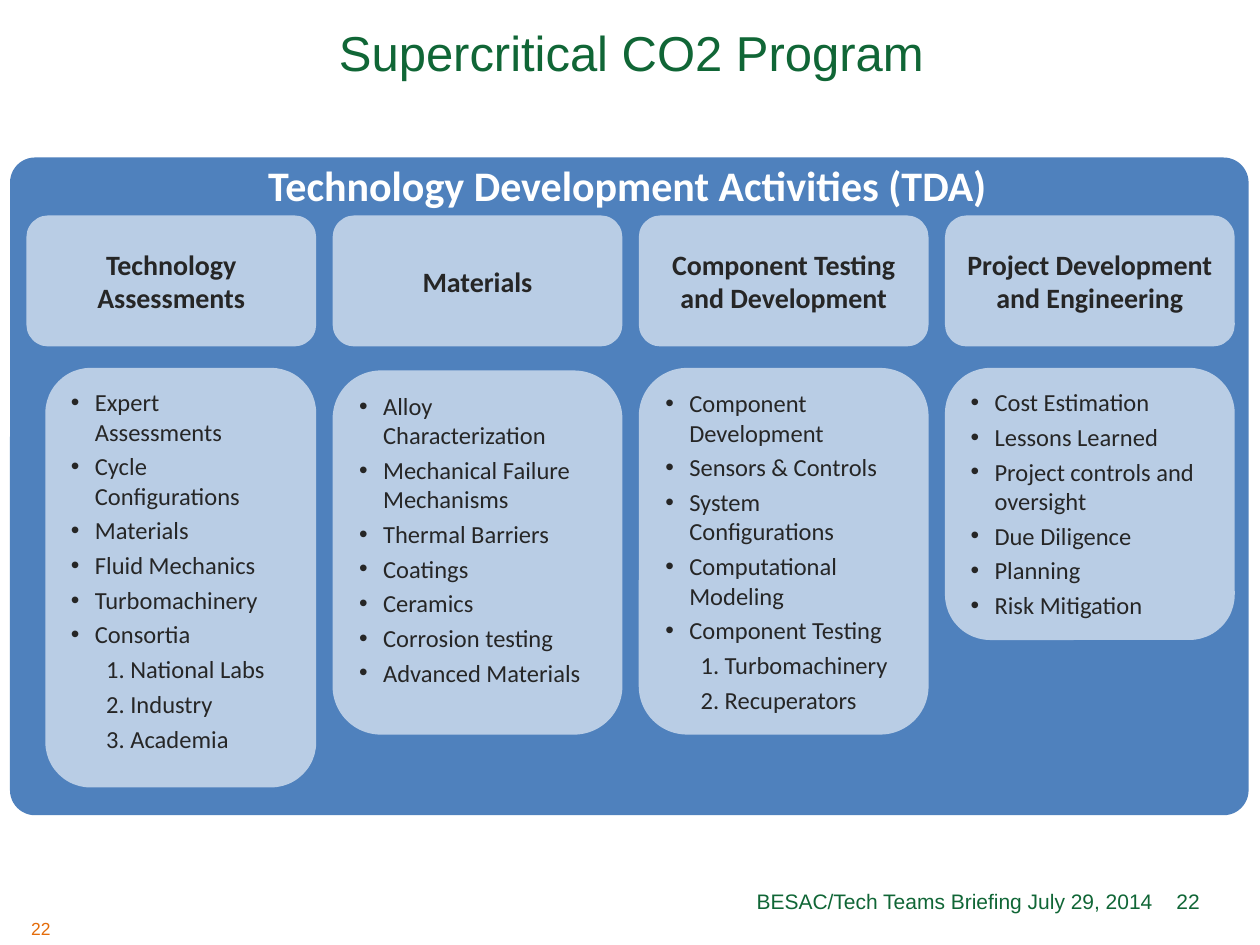
from lxml.etree import SubElement
from pptx import Presentation
from pptx.dml.color import RGBColor
from pptx.enum.shapes import MSO_SHAPE as Shape
from pptx.enum.text import MSO_ANCHOR as Anchor, PP_ALIGN as Align
from pptx.oxml.ns import qn
from pptx.util import Inches, Pt

COLORS = {
    "green": "106636",
    "orange": "E46C0A",
    "panel": "4F81BD",
    "card": "B9CDE5",
    "dark": "262626",
    "white": "FFFFFF",
}

# Heading, card left inset, card top, card height, bullets, numbered steps
COLUMNS = [
    ("Technology Assessments", 0.15, 2.92, 3.33,
     ["Expert Assessments", "Cycle Configurations", "Materials",
      "Fluid Mechanics", "Turbomachinery", "Consortia"],
     ["National Labs", "Industry", "Academia"]),
    ("Materials", 0, 2.94, 2.89,
     ["Alloy Characterization", "Mechanical Failure Mechanisms",
      "Thermal Barriers", "Coatings", "Ceramics", "Corrosion testing",
      "Advanced Materials"], []),
    ("Component Testing and Development", 0, 2.92, 2.91,
     ["Component Development", "Sensors & Controls",
      "System Configurations", "Computational Modeling",
      "Component Testing"],
     ["Turbomachinery", "Recuperators"]),
    ("Project Development and Engineering", 0, 2.92, 2.16,
     ["Cost Estimation", "Lessons Learned",
      "Project controls and oversight", "Due Diligence", "Planning",
      "Risk Mitigation"], []),
]
COLUMN_LEFT, COLUMN_STEP, COLUMN_WIDTH = 0.21, 2.43, 2.3


def rgb(name):
    return RGBColor.from_string(COLORS[name])


def add_span(para, text, size, color, font="Calibri", bold=False):
    span = para.add_run()
    span.text = text
    span.font.name = font
    span.font.size = Pt(size)
    span.font.bold = bold
    span.font.color.rgb = rgb(color)


def fill_line(shape, text, size, color, align=Align.CENTER,
              anchor=Anchor.MIDDLE, **style):
    """Write one aligned paragraph into a shape, box or placeholder."""
    frame = shape.text_frame
    frame.word_wrap = True
    frame.vertical_anchor = anchor
    para = frame.paragraphs[0]
    para.alignment = align
    add_span(para, text, size, color, **style)


def add_label(page, at, text, size, color, **style):
    box = page.shapes.add_textbox(*map(Inches, at))
    fill_line(box, text, size, color, **style)


def add_panel(page, at, color):
    panel = page.shapes.add_shape(Shape.ROUNDED_RECTANGLE, *map(Inches, at))
    panel.shadow.inherit = False
    panel.fill.solid()
    panel.fill.fore_color.rgb = rgb(color)
    panel.line.fill.background()
    return panel


def indent(para, left, hanging=0):
    props = para._p.get_or_add_pPr()
    props.set("marL", str(Inches(left)))
    props.set("indent", str(-Inches(hanging)))
    return props


def add_list(card, bullets, steps):
    frame = card.text_frame
    frame.word_wrap = True
    frame.vertical_anchor = Anchor.TOP
    numbered = [f"{number}. {step}" for number, step in enumerate(steps, 1)]
    for index, text in enumerate(bullets + numbered):
        para = frame.add_paragraph() if index else frame.paragraphs[0]
        para.alignment = Align.LEFT
        if index:
            para.space_before = Pt(3)
        if index < len(bullets):
            props = indent(para, 0.19, 0.19)
            SubElement(props, qn("a:buFont")).set("typeface", "Arial")
            SubElement(props, qn("a:buChar")).set("char", "•")
        else:
            indent(para, 0.28)
        add_span(para, text, 14, "dark")


def main():
    deck = Presentation()
    deck.slide_width, deck.slide_height = Inches(10), Inches(7.5)
    page = deck.slides.add_slide(deck.slide_layouts[5])

    # Title
    title = page.shapes.title
    title.left, title.top = Inches(0.01), Inches(0.17)
    title.width, title.height = Inches(10), Inches(0.49)
    fill_line(title, "Supercritical CO2 Program", 28, "green", font="Arial")

    # Background panel and its heading
    panel = add_panel(page, (0.08, 1.25, 9.83, 5.22), "panel")
    panel.adjustments[0] = 0.038
    add_label(page, (0.26, 1.3, 9.44, 0.33),
              "Technology Development Activities (TDA)", 24, "white",
              bold=True)

    # Columns: a heading above a list card
    for index, (name, inset, top, height, bullets, steps) in enumerate(COLUMNS):
        left = COLUMN_LEFT + index * COLUMN_STEP
        heading = add_panel(page, (left, 1.71, COLUMN_WIDTH, 1.04), "card")
        fill_line(heading, name, 16, "dark", bold=True)
        card = add_panel(
            page, (left + inset, top, COLUMN_WIDTH - inset, height), "card")
        add_list(card, bullets, steps)

    # Footer and page numbers
    add_label(page, (0.1, 7.3, 0.4, 0.2), "22", 10, "orange", font="Arial",
              align=Align.RIGHT, anchor=Anchor.BOTTOM)
    add_label(page, (3.42, 6.95, 5.83, 0.4),
              "BESAC/Tech Teams Briefing July 29, 2014", 12, "green",
              font="Arial", align=Align.RIGHT)
    add_label(page, (9.2, 6.95, 0.42, 0.4), "22", 12, "green", font="Arial",
              align=Align.RIGHT)

    deck.save("out.pptx")


if __name__ == "__main__":
    main()
